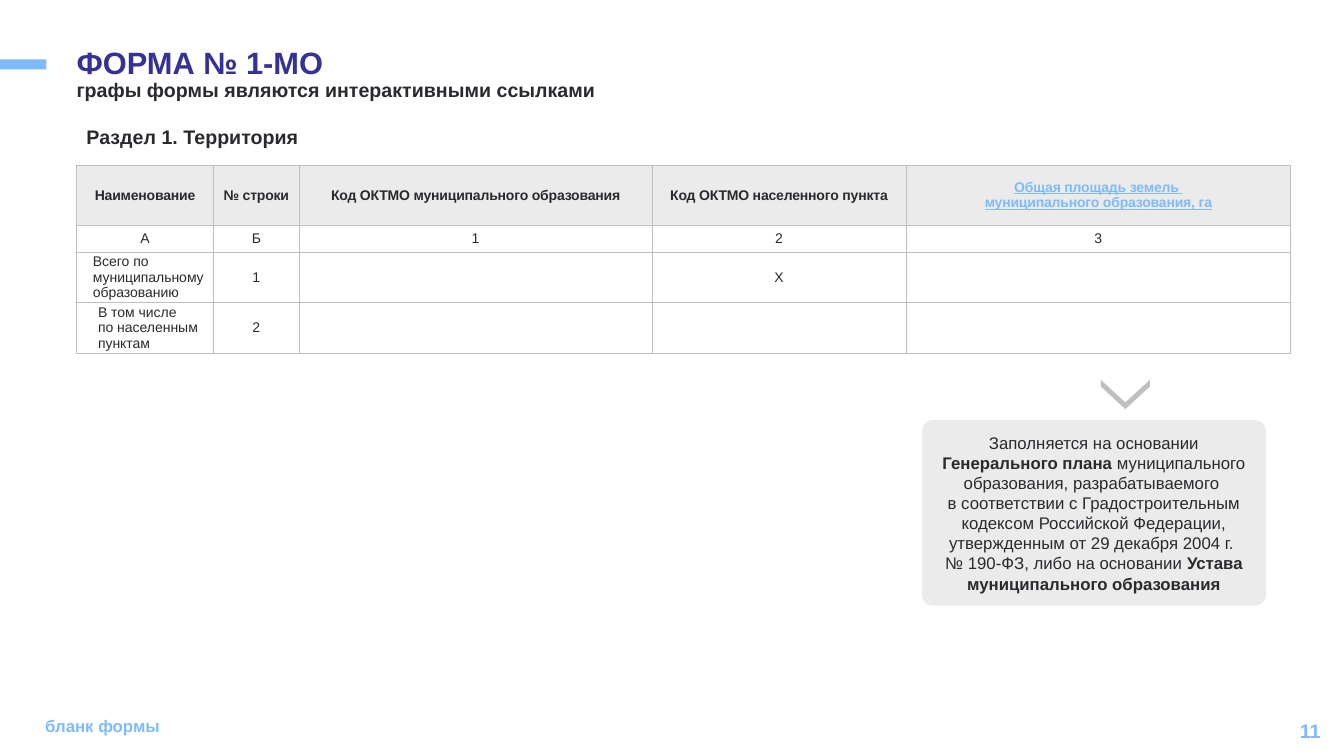
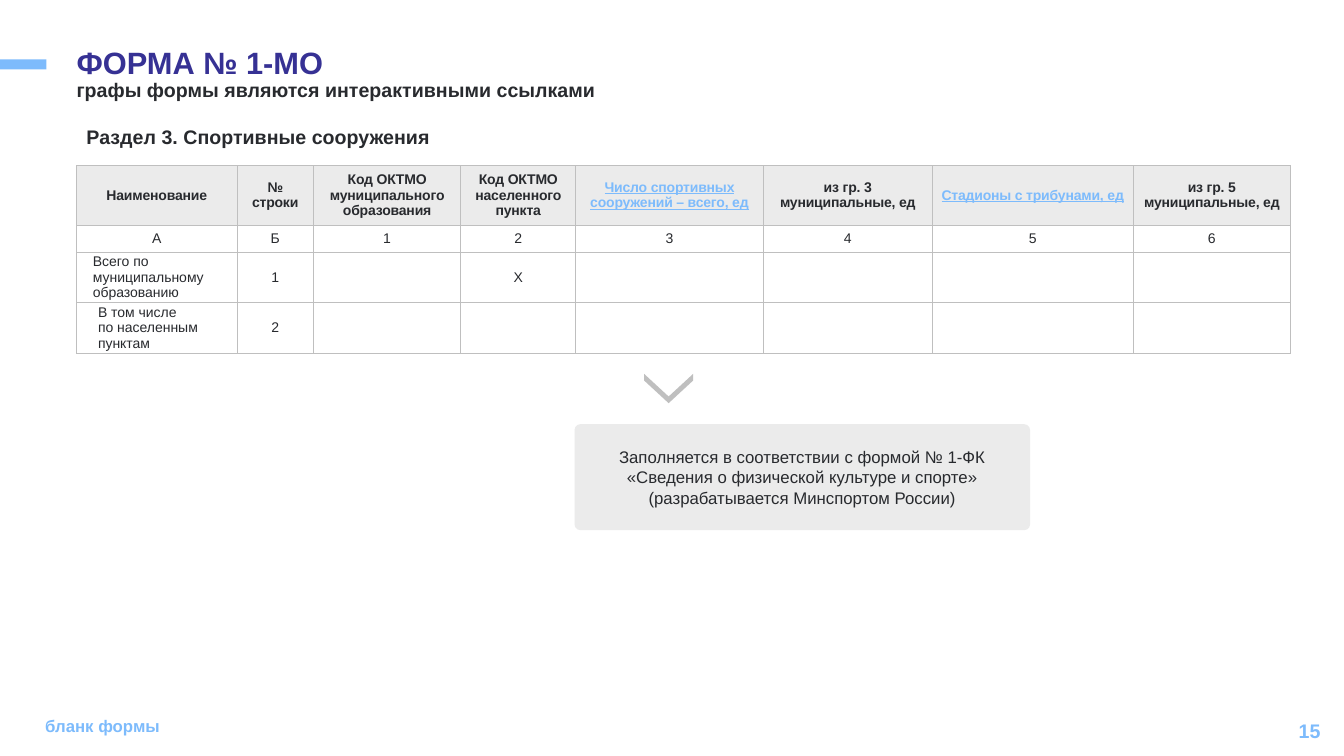
from lxml.etree import SubElement
from pptx import Presentation
from pptx.dml.color import RGBColor
from pptx.enum.shapes import MSO_SHAPE
from pptx.enum.text import MSO_ANCHOR, MSO_AUTO_SIZE, PP_ALIGN
from pptx.oxml.ns import qn
from pptx.util import Cm, Pt

COLORS = {
    "title": "363194",
    "text": "282A2E",
    "accent": "7DBBFC",
    "panel": "EBEBEB",
    "line": "BFBFBF",
}
FONT = "Arial"
TITLE = "ФОРМА № 1-МО"
SUBTITLE = "графы формы являются интерактивными ссылками"
FOOTER = "бланк формы"

TABLE_LEFT, TABLE_TOP = 1.93, 4.17
ROW_HEIGHTS = [1.5, 0.65, 1.18, 1.17]
ROW_TITLES = [
    "Всего по муниципальному образованию",
    "В том числе \vпо населенным пунктам",
]
ROW_TITLE_INSETS = [0.05, 0.18]

FORMS = [
    {
        "page": "11",
        "section": "Раздел 1. Территория",
        "columns": [
            ("Наименование", 3.45),
            ("№ строки", 2.16),
            ("Код ОКТМО муниципального образования", 8.89),
            ("Код ОКТМО населенного пункта", 6.4),
            ("Общая площадь земель \vмуниципального образования, га", 9.7),
        ],
        "linked": {4},
        "note_box": (23.24, 10.59, 8.66, 4.67),
        "pointer_offset": (5.12, -0.65),
        "note": [
            ("Заполняется на основании ", False),
            ("Генерального плана ", True),
            ("муниципального образования, разрабатываемого \n"
             "в соответствии с Градостроительным кодексом Российской Федерации, "
             "утвержденным от 29 декабря 2004 г. \n"
             "№ 190-ФЗ, либо на основании ", False),
            ("Устава муниципального образования", True),
        ],
    },
    {
        "page": "15",
        "section": "Раздел 3. Спортивные сооружения",
        "columns": [
            ("Наименование", 4.04),
            ("№ строки", 1.93),
            ("Код ОКТМО муниципального образования", 3.71),
            ("Код ОКТМО населенного пункта", 2.9),
            ("Число спортивных сооружений – всего, ед", 4.72),
            ("из гр. 3\nмуниципальные, ед", 4.27),
            ("Стадионы с трибунами, ед", 5.05),
            ("из гр. 5\nмуниципальные, ед", 3.98),
        ],
        "linked": {4, 6},
        "note_box": (14.48, 10.69, 11.48, 2.67),
        "pointer_offset": (2.37, -0.9),
        "note": [
            ("Заполняется в соответствии с формой № 1-ФК "
             "«Сведения о физической культуре и спорте» "
             "(разрабатывается Минспортом России)", False),
        ],
    },
]


def rgb(name):
    return RGBColor.from_string(COLORS[name])


def style_run(run, size, color="text", bold=False):
    run.font.name = FONT
    run.font.size = Pt(size)
    run.font.bold = bold
    run.font.color.rgb = rgb(color)


def style_text(frame, size, color="text", bold=False, align=PP_ALIGN.LEFT):
    for paragraph in frame.paragraphs:
        paragraph.alignment = align
        for run in paragraph.runs:
            style_run(run, size, color, bold)


def add_label(slide, box, text, size, color="text", align=PP_ALIGN.LEFT):
    frame = slide.shapes.add_textbox(*map(Cm, box)).text_frame
    frame.word_wrap = True
    frame.text = text
    style_text(frame, size, color, True, align)
    return frame


def add_plain_shape(slide, preset, box, color):
    shape = slide.shapes.add_shape(preset, *map(Cm, box))
    shape.shadow.inherit = False
    shape.fill.solid()
    shape.fill.fore_color.rgb = rgb(color)
    shape.line.fill.background()
    return shape


def add_frame(slide, page):
    add_plain_shape(slide, MSO_SHAPE.RECTANGLE, (0, 1.5, 1.17, 0.25), "accent")
    title = slide.shapes.title
    title.left, title.top, title.width, title.height = map(Cm, (1.68, 1.09, 26.44, 1.45))
    heading = title.text_frame
    heading.text = TITLE
    heading.auto_size = MSO_AUTO_SIZE.NONE
    heading.vertical_anchor = MSO_ANCHOR.TOP
    style_text(heading, 22, "title", True)
    subtitle = add_label(slide, (1.68, 1.9, 26.44, 1.12), SUBTITLE, 14)
    for frame in (heading, subtitle):
        frame.paragraphs[0].line_spacing = 0.9
    add_label(slide, (0.89, 17.91, 28.4, 1.02), FOOTER, 12, "accent")
    number = add_label(slide, (25.91, 17.91, 7.62, 1.02), page, 14, "accent", PP_ALIGN.RIGHT)
    number.vertical_anchor = MSO_ANCHOR.MIDDLE


def add_borders(cell):
    properties = cell._tc.get_or_add_tcPr()
    for side in ("a:lnL", "a:lnR", "a:lnT", "a:lnB"):
        border = SubElement(properties, qn(side), w=str(Pt(0.5)))
        fill = SubElement(border, qn("a:solidFill"))
        SubElement(fill, qn("a:srgbClr"), val=COLORS["line"])


def set_insets(cell, side, vertical=0):
    cell.margin_left = cell.margin_right = Cm(side)
    cell.margin_top = cell.margin_bottom = Cm(vertical)


def style_header(cell, linked):
    cell.fill.solid()
    cell.fill.fore_color.rgb = rgb("panel")
    style_text(cell.text_frame, 10, "accent" if linked else "text", True, PP_ALIGN.CENTER)
    for paragraph in cell.text_frame.paragraphs:
        for run in paragraph.runs:
            run.font.underline = linked
            run._r.get_or_add_rPr().set("spc", "-10")


def style_row_title(cell, inset):
    set_insets(cell, inset)
    style_text(cell.text_frame, 10)
    cell.text_frame.paragraphs[0]._p.get_or_add_pPr().set("marL", str(Cm(0.36)))


def add_form_table(slide, left, top, columns, linked):
    count = len(columns)
    blanks = [""] * (count - 4)
    rows = [
        [heading for heading, _ in columns],
        ["А", "Б"] + [str(n) for n in range(1, count - 1)],
        [ROW_TITLES[0], "1", "", "Х"] + blanks,
        [ROW_TITLES[1], "2", "", ""] + blanks,
    ]
    total_width = sum(width for _, width in columns)
    table = slide.shapes.add_table(
        len(rows), count, Cm(left), Cm(top), Cm(total_width), Cm(sum(ROW_HEIGHTS))
    ).table
    for column, (_, width) in zip(table.columns, columns):
        column.width = Cm(width)
    for r, (texts, height) in enumerate(zip(rows, ROW_HEIGHTS)):
        table.rows[r].height = Cm(height)
        for c, text in enumerate(texts):
            cell = table.cell(r, c)
            cell.text_frame.text = text
            cell.vertical_anchor = MSO_ANCHOR.MIDDLE
            set_insets(cell, 0.18 if r != 1 else 0.2, 0.13 if r < 2 and c < 2 else 0)
            add_borders(cell)
            if r == 0:
                style_header(cell, c in linked)
                continue
            cell.fill.background()
            if r > 1 and c == 0:
                style_row_title(cell, ROW_TITLE_INSETS[r - 2])
            else:
                style_text(cell.text_frame, 10, align=PP_ALIGN.CENTER)


def add_note(slide, box, pointer_offset, pieces):
    panel = add_plain_shape(slide, MSO_SHAPE.ROUNDED_RECTANGLE, box, "panel")
    panel.adjustments[0] = 0.055
    frame = panel.text_frame
    frame.word_wrap = True
    frame.vertical_anchor = MSO_ANCHOR.MIDDLE
    paragraph = frame.paragraphs[0]
    paragraph.alignment = PP_ALIGN.CENTER
    for text, bold in pieces:
        for index, line in enumerate(text.split("\n")):
            if index:
                paragraph.add_line_break()
            run = paragraph.add_run()
            run.text = line
            style_run(run, 12, bold=bold)

    width, height = 0.74, 1.24
    center_x, center_y = box[0] + pointer_offset[0], box[1] + pointer_offset[1]
    pointer_box = (center_x - width / 2, center_y - height / 2, width, height)
    pointer = add_plain_shape(slide, MSO_SHAPE.CHEVRON, pointer_box, "line")
    pointer.adjustments[0] = 0.774
    pointer.rotation = 90


def add_form_slide(prs, form):
    slide = prs.slides.add_slide(prs.slide_layouts[5])
    add_frame(slide, form["page"])
    add_label(slide, (TABLE_LEFT, 3.02, 12, 0.86), form["section"], 14)
    add_form_table(slide, TABLE_LEFT, TABLE_TOP, form["columns"], form["linked"])
    add_note(slide, form["note_box"], form["pointer_offset"], form["note"])


def main():
    prs = Presentation()
    prs.slide_width, prs.slide_height = Cm(33.87), Cm(19.05)
    for form in FORMS:
        add_form_slide(prs, form)
    prs.save("out.pptx")


if __name__ == "__main__":
    main()
